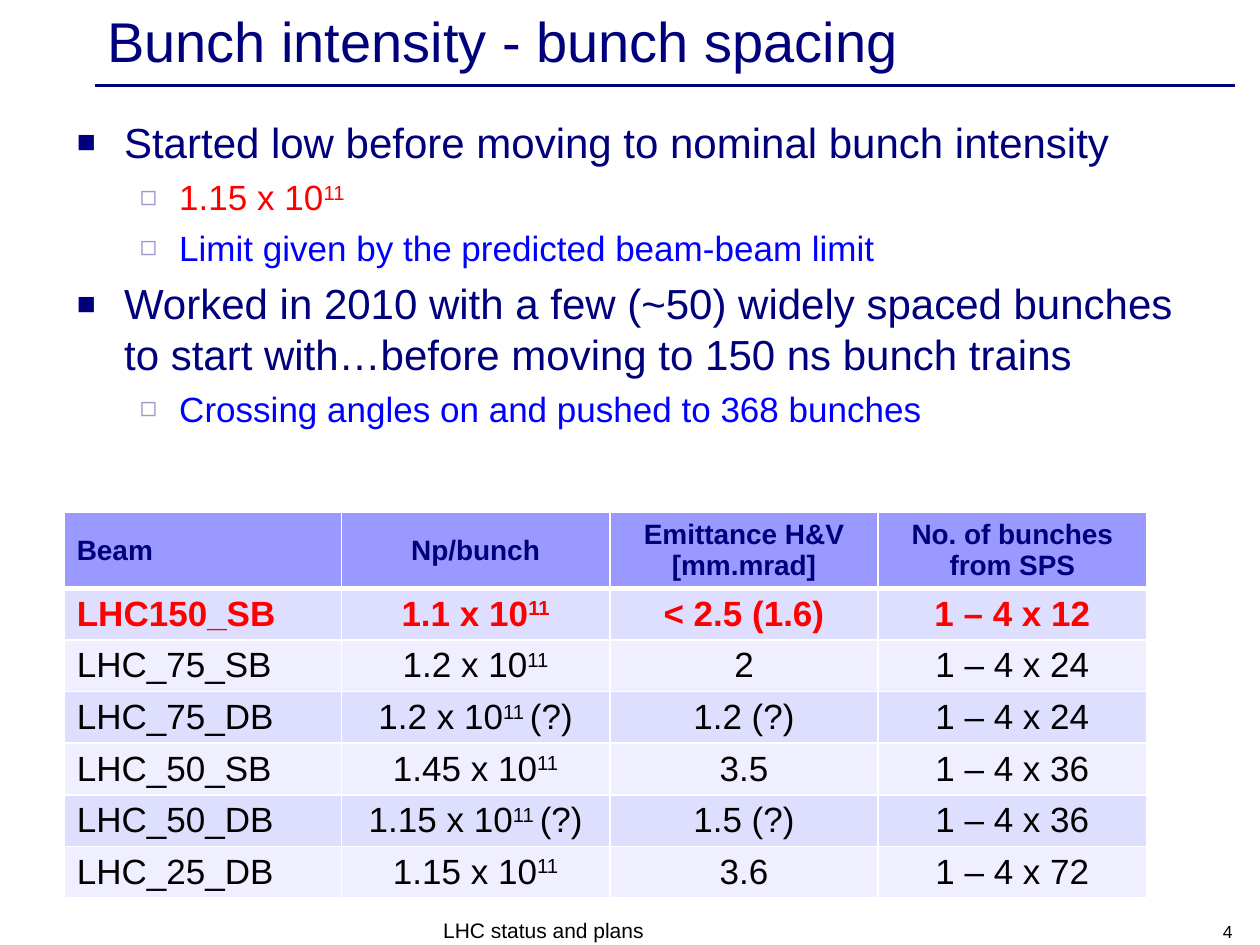
from lxml import etree
from pptx import Presentation
from pptx.dml.color import RGBColor
from pptx.enum.shapes import MSO_CONNECTOR
from pptx.enum.text import MSO_ANCHOR, MSO_AUTO_SIZE, PP_ALIGN
from pptx.oxml.ns import qn
from pptx.util import Pt

STRAIGHT = MSO_CONNECTOR.STRAIGHT
MIDDLE, BOTTOM, TOP = MSO_ANCHOR.MIDDLE, MSO_ANCHOR.BOTTOM, MSO_ANCHOR.TOP
LEFT, CENTER, RIGHT = PP_ALIGN.LEFT, PP_ALIGN.CENTER, PP_ALIGN.RIGHT
NO_FIT = MSO_AUTO_SIZE.NONE

FONT = "Arial"
NAVY, BLUE, RED, BLACK, WHITE = "00007D", "0000FF", "FF0000", "000000", "FFFFFF"
LILAC, HEADER_FILL, BANDS = "9999CC", "9999FF", ("DEDEFF", "EFEFFF")

# Text between two ^ marks is superscript
BULLETS = [
    (0, "Started low before moving to nominal bunch intensity", NAVY),
    (1, "1.15 x 10^11", RED),
    (1, "Limit given by the predicted beam-beam limit", BLUE),
    (0, "Worked in 2010 with a few (~50) widely spaced bunches to start with…"
        "before moving to 150 ns bunch trains", NAVY),
    (1, "Crossing angles on and pushed to 368 bunches", BLUE),
]
# Per level: size, indent, hanging, space before, bullet, bullet colour, bullet percent
LEVELS = [
    (24, 27, 27, 5.5, "■", NAVY, 75),
    (20, 58.5, 22.5, 5, "◻", LILAC, 80),
]
BEAMS = [
    ("Beam", "Np/bunch", "Emittance H&V\v[mm.mrad]", "No. of bunches from SPS"),
    ("LHC150_SB", "1.1 x 10^11", "< 2.5 (1.6)", "1 – 4 x 12"),
    ("LHC_75_SB", "1.2 x 10^11", "2", "1 – 4 x 24"),
    ("LHC_75_DB", "1.2 x 10^11 ^(?)", "1.2 (?)", "1 – 4 x 24"),
    ("LHC_50_SB", "1.45 x 10^11", "3.5", "1 – 4 x 36"),
    ("LHC_50_DB", "1.15 x 10^11 ^(?)", "1.5 (?)", "1 – 4 x 36"),
    ("LHC_25_DB", "1.15 x 10^11", "3.6", "1 – 4 x 72"),
]


def rgb(color):
    return RGBColor.from_string(color)


def place(shape, box):
    shape.left, shape.top, shape.width, shape.height = (Pt(value) for value in box)


def write(paragraph, text, size, color, bold=False, align=LEFT):
    first, *others = text.split("^")
    paragraph.text = first
    paragraph.alignment = align
    for piece in others:
        paragraph.add_run().text = piece
    for index, run in enumerate(paragraph.runs):
        run.font.name, run.font.size, run.font.bold = FONT, Pt(size), bold
        run.font.color.rgb = rgb(color)
        if others and index % 2:
            run._r.get_or_add_rPr().set("baseline", "30000")


def add_bullet(paragraph, indent, hanging, character, color, percent):
    properties = paragraph._p.get_or_add_pPr()
    properties.set("marL", str(Pt(indent)))
    properties.set("indent", str(-Pt(hanging)))
    bullet_color = etree.SubElement(properties, qn("a:buClr"))
    etree.SubElement(bullet_color, qn("a:srgbClr"), val=color)
    etree.SubElement(properties, qn("a:buSzPct"), val=str(percent * 1000))
    etree.SubElement(properties, qn("a:buFont"), typeface=FONT)
    etree.SubElement(properties, qn("a:buChar"), char=character)


def add_title(slide, box, text):
    title = slide.shapes.title
    place(title, box)
    frame = title.text_frame
    frame.auto_size, frame.vertical_anchor = NO_FIT, MIDDLE
    write(frame.paragraphs[0], text, 32, NAVY)


def add_rule(slide, left, right, y):
    rule = slide.shapes.add_connector(STRAIGHT, Pt(left), Pt(y), Pt(right), Pt(y))
    rule.line.color.rgb = rgb(NAVY)
    rule.line.width = Pt(2)
    etree.SubElement(rule._element.spPr, qn("a:effectLst"))


def add_list(slide, box, items):
    body = slide.placeholders[1]
    place(body, box)
    frame = body.text_frame
    frame.auto_size, frame.vertical_anchor = NO_FIT, TOP
    frame.margin_top = Pt(6)
    for index, (level, text, color) in enumerate(items):
        size, indent, hanging, space, character, bullet_color, percent = LEVELS[level]
        paragraph = frame.add_paragraph() if index else frame.paragraphs[0]
        paragraph.level = level
        paragraph.space_before = Pt(space if index else 0)
        add_bullet(paragraph, indent, hanging, character, bullet_color, percent)
        write(paragraph, text, size, color)


def add_borders(cell, widths):
    properties = cell._tc.get_or_add_tcPr()
    for side, width in zip("LRTB", widths):
        line = etree.SubElement(properties, qn(f"a:ln{side}"), w=str(Pt(width)))
        fill = etree.SubElement(line, qn("a:solidFill"))
        etree.SubElement(fill, qn("a:srgbClr"), val=WHITE)


def add_beam_table(slide, box, rows, first_width, header_height):
    left, top, width, height = (Pt(value) for value in box)
    table = slide.shapes.add_table(len(rows), len(rows[0]), left, top, width, height).table
    for index, column in enumerate(table.columns):
        column.width = Pt((box[2] - first_width) / (len(rows[0]) - 1) if index else first_width)
    for r, texts in enumerate(rows):
        table.rows[r].height = Pt((box[3] - header_height) / (len(rows) - 1) if r else header_height)
        # Header, highlighted beam, other beams
        size, color, bold = [(16, NAVY, True), (20, RED, True), (20, BLACK, False)][min(r, 2)]
        for c, text in enumerate(texts):
            cell = table.cell(r, c)
            cell.margin_top = cell.margin_bottom = Pt(2.4)
            cell.vertical_anchor = MIDDLE
            add_borders(cell, (1, 1, 3 if r == 1 else 1, 1 if r else 3))
            cell.fill.solid()
            cell.fill.fore_color.rgb = rgb(BANDS[(r - 1) % 2] if r else HEADER_FILL)
            write(cell.text_frame.paragraphs[0], text, size, color, bold, CENTER if c else LEFT)


def add_footer(slide, box, text, size, align):
    footer = slide.shapes.add_textbox(*(Pt(value) for value in box))
    frame = footer.text_frame
    frame.word_wrap, frame.vertical_anchor = True, BOTTOM
    write(frame.paragraphs[0], text, size, BLACK, align=align)


def main():
    presentation = Presentation()
    presentation.slide_width, presentation.slide_height = Pt(720), Pt(540)
    slide = presentation.slides.add_slide(presentation.slide_layouts[1])

    add_rule(slide, 54, 705.6, 49)
    add_list(slide, (36.7, 60.5, 648, 255), BULLETS)
    add_title(slide, (54, 2.2, 648, 41), "Bunch intensity - bunch spacing")
    add_footer(slide, (246.2, 522, 228.2, 20), "LHC status and plans", 12, LEFT)
    add_footer(slide, (543.6, 522, 167.8, 20), "4", 10, RIGHT)
    add_beam_table(slide, (36.7, 293, 618.5, 219.2), BEAMS, 158.4, 42)

    presentation.save("out.pptx")


if __name__ == "__main__":
    main()
